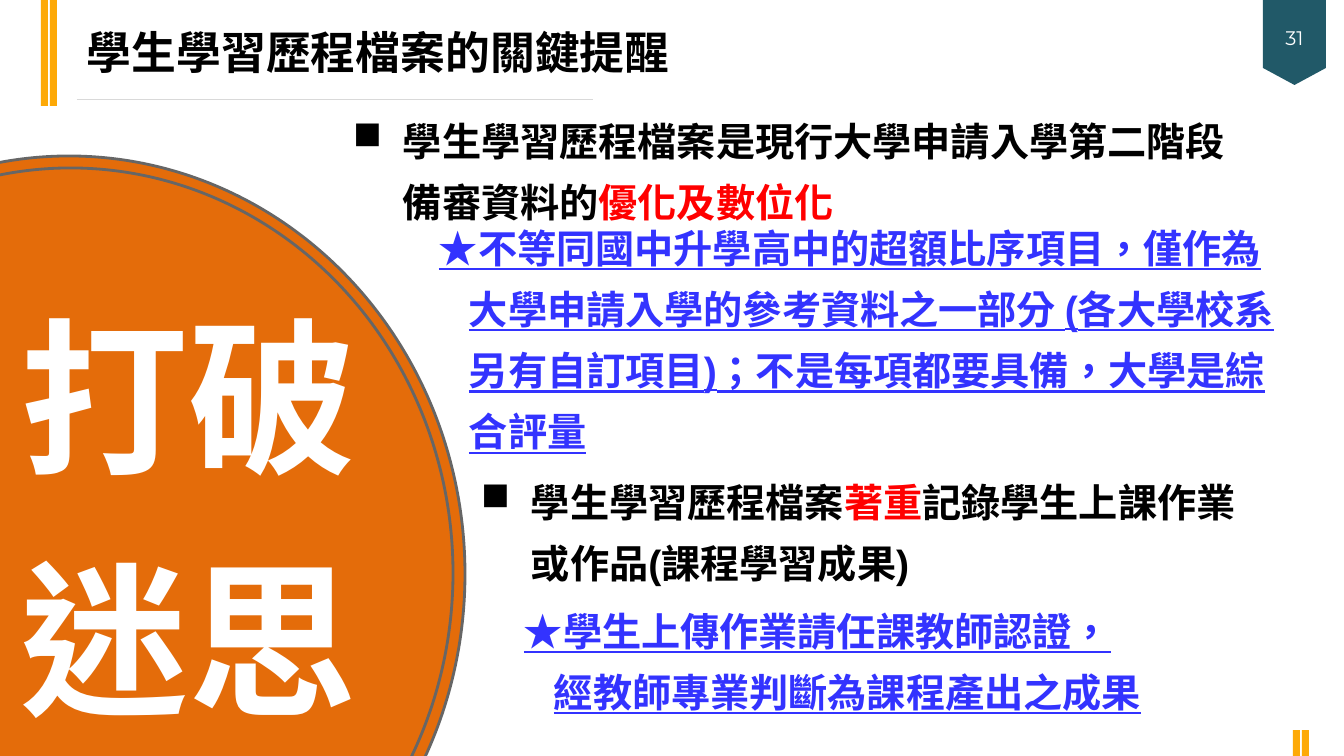
"""Build the slide of key reminders about student learning portfolios."""
from lxml import etree
from pptx import Presentation
from pptx.dml.color import RGBColor
from pptx.enum.lang import MSO_LANGUAGE_ID
from pptx.enum.shapes import MSO_CONNECTOR, MSO_SHAPE
from pptx.enum.text import MSO_ANCHOR, PP_ALIGN
from pptx.oxml.ns import qn
from pptx.util import Emu, Pt

PX = 12192000 / 1344
RECTANGLE = MSO_SHAPE.RECTANGLE
OVAL = MSO_SHAPE.OVAL
PAGE_TAG = MSO_SHAPE.FLOWCHART_OFFPAGE_CONNECTOR
STRAIGHT = MSO_CONNECTOR.STRAIGHT
MIDDLE = MSO_ANCHOR.MIDDLE
CENTER = PP_ALIGN.CENTER
CHINESE = MSO_LANGUAGE_ID.TRADITIONAL_CHINESE
COLORS = {
    "amber": "FDA907", "orange": "E46C0A", "teal": "215968", "rule": "D9D9D9",
    "ring": "666666", "black": "000000", "red": "FF0000", "blue": "3333FF",
    "white": "FFFFFF",
}

prs = Presentation()
prs.slide_width, prs.slide_height = Emu(round(1344 * PX)), Emu(round(756 * PX))
slide = prs.slides.add_slide(prs.slide_layouts[6])


def add_block(kind, box, fill, outline=None):
    block = slide.shapes.add_shape(kind, *(Emu(round(v * PX)) for v in box))
    block.shadow.inherit = False
    block.fill.solid()
    block.fill.fore_color.rgb = RGBColor.from_string(COLORS[fill])
    if outline:
        block.line.color.rgb = RGBColor.from_string(COLORS[outline])
        block.line.width = Pt(2)
    else:
        block.line.fill.background()
    return block


def add_text(box, pieces, size, font, color, spacing=1.0):
    frame = slide.shapes.add_textbox(*(Emu(round(v * PX)) for v in box)).text_frame
    frame.word_wrap = True
    paragraph = frame.paragraphs[0]
    paragraph.line_spacing = spacing
    paragraph.font.size = Pt(size)
    paragraph.font.name = font
    paragraph.font.bold = True
    paragraph.font.color.rgb = RGBColor.from_string(COLORS[color])
    for words, accent in pieces:
        for i, line in enumerate(words.split("\n")):
            if i:
                paragraph.add_line_break()
            run = paragraph.add_run()
            run.text = line
            run.font.language_id = CHINESE
            if accent:
                run.font.color.rgb = RGBColor.from_string(COLORS[accent])
    return frame


for left, top, height in ((41, 0, 106), (50, 0, 106), (1293, 730, 26), (1302, 730, 26)):
    add_block(RECTANGLE, (left, top, 7, height), "amber")

title_rule = slide.shapes.add_connector(
    STRAIGHT, *(Emu(round(v * PX)) for v in (77, 100, 593, 100)))
title_rule.line.color.rgb = RGBColor.from_string(COLORS["rule"])
title_rule.line.width = Pt(0.75)
etree.SubElement(title_rule._element.spPr, qn("a:effectLst"))

page_tag = add_block(PAGE_TAG, (1263, 0, 63, 85), "teal")
page_tag.text_frame.vertical_anchor = MIDDLE
page_number = page_tag.text_frame.paragraphs[0]
page_number.text = "31"
page_number.alignment = CENTER
page_number.line_spacing = 1.3
page_number.font.size = Pt(14)
page_number.font.name = "Montserrat"
page_number.font.color.rgb = RGBColor.from_string(COLORS["white"])

title = add_text((77, 20, 874, 64), [("學生學習歷程檔案的關鍵提醒", None)],
                 32, "Roboto Condensed", "black")
title.vertical_anchor = MIDDLE

points = [
    ((343, 98, 904, 134), [("學生學習歷程檔案是現行大學申請入學第二階段備審資料的", None),
                           ("優化及數位化", "red")]),
    ((471, 459, 820, 128), [("學生學習歷程檔案", None), ("著重", "red"),
                            ("記錄學生上課作業\n或作品(課程學習成果)", None)]),
]
for box, pieces in points:
    paragraph = add_text(box, pieces, 28, "Arial", "black", 1.3).paragraphs[0]
    properties = paragraph._p.get_or_add_pPr()
    properties.set("marL", str(round(50 * PX)))
    properties.set("indent", str(round(-50 * PX)))
    bullet = etree.Element(qn("a:buChar"), char="■")
    properties.find(qn("a:defRPr")).addprevious(bullet)

notes = [
    ((429, 205, 870, 251), "★不等同國中升學高中的超額比序項目，僅作為大學申請入學的參考資料之一部分 "
                           "(各大學校系另有自訂項目)；不是每項都要具備，大學是綜合評量"),
    ((514, 588, 761, 128), "★學生上傳作業請任課教師認證，\n經教師專業判斷為課程產出之成果"),
]
for box, words in notes:
    paragraph = add_text(box, [(words, None)], 28, "Arial", "blue", 1.3).paragraphs[0]
    paragraph.font.underline = True
    properties = paragraph._p.get_or_add_pPr()
    properties.set("marL", str(round(30 * PX)))
    properties.set("indent", str(round(-30 * PX)))

for box in ((-327, 156, 792, 836), (-312, 168, 765, 810)):
    add_block(OVAL, box, "orange", "ring")
add_text((11, 248, 358, 478), [("打破迷思", None)], 120, "Noto Sans CJK SC", "white", 1.2)

prs.save("out.pptx")
